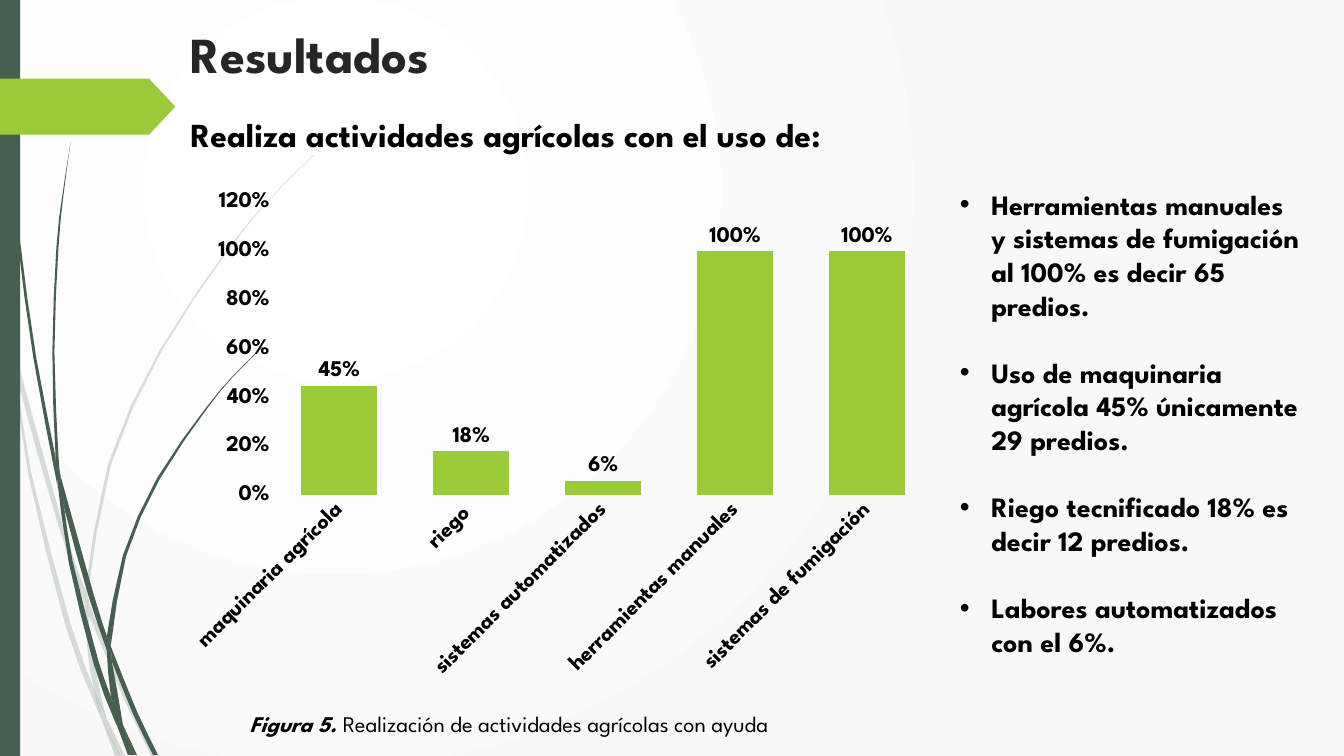
"""Build the results slide: farming activities chart with findings."""
from pptx import Presentation
from pptx import util as u
from pptx.chart.data import CategoryChartData
from pptx.dml.color import RGBColor
from pptx.enum import chart as ch, shapes
from pptx.oxml import parse_xml
from pptx.oxml.ns import nsdecls, qn
from pptx.oxml.xmlchemy import OxmlElement

Pt = u.Pt
FONT = "League Spartan"
COLORS = {"forest": "455F51", "lime": "99CB38", "title": "262626",
          "text": "000000", "center": "FFFFFF", "edge": "F8F8F8"}
PALE_BLADES = [
    ([(0, 215.3), (7.2, 247.7), (7.9, 252)], [(0, 203), (6.5, 231.8), (7.9, 252)]),
    ([(10.1, 248.4), (12.2, 270.7), (41.8, 375.8), (60.5, 431.3)],
     [(10.1, 248.4), (44.6, 374.4), (61.2, 421.9)]),
    ([(63.4, 439.2), (88.6, 499.7), (108, 540)],
     [(63.4, 429.1), (66.2, 437), (91.4, 498.2), (111.6, 540)]),
    ([(75.6, 511.9), (85.7, 540)], [(75.6, 511.9), (89.3, 540)]),
    ([(7.9, 252), (20.2, 338.4), (46.8, 447.1), (66.2, 499), (72.7, 514.1)],
     [(7.9, 252), (12.2, 270.7), (22.3, 337.7), (50.4, 445.7), (67, 491.8), (72.7, 514.1)]),
    ([(60.5, 431.3), (62.6, 465.1), (67, 491.8), (75.6, 511.9)],
     [(63.4, 439.2), (65.5, 465.1), (75.6, 511.9)]),
    ([(224.6, 110.2), (208.1, 126), (193, 141.8), (164.2, 175.7), (113.8, 250.6),
      (77, 331.9), (61.2, 420.5)],
     [(224.6, 110.9), (208.8, 126), (193, 142.6), (164.9, 176.4), (115.2, 251.3),
      (79.2, 332.6), (63.4, 420.5), (63.4, 429.1)]),
    ([(72.7, 514.1), (82.1, 540)], [(72.7, 514.1), (85.7, 540)]),
    ([(61.2, 421.9), (60.5, 431.3)], [(63.4, 429.1), (63.4, 439.2)]),
    ([(67, 491.8), (72.7, 514.1), (85.7, 540)], [(67, 491.8), (75.6, 511.9), (85.7, 540)]),
]
DARK_BLADES = [
    ([(2.2, 0), (5, 79.2), (12.2, 167.8), (23.8, 255.6), (40.3, 343.4), (41, 346.3)],
     [(2.9, 0), (5.8, 78.5), (13.7, 167), (25.9, 255.6), (39.6, 326.2), (41, 346.3)]),
    ([(43.2, 339.8), (46.1, 363.6), (63.4, 426.2), (76.3, 464.4)],
     [(43.2, 339.8), (67, 424.8), (76.3, 454.3)]),
    ([(79.9, 472.3), (95, 509.8), (109.4, 539.3)],
     [(79.2, 461.5), (81.4, 467.3), (97.9, 508.3), (113, 539.3)]),
    ([(41, 343.4), (49, 401), (67, 474.5), (79.9, 509.8), (84.2, 519.8)],
     [(41, 343.4), (46.1, 363.6), (51.8, 400.3), (70.6, 473), (79.2, 497.5), (84.2, 519.8)]),
    ([(50.4, 101.5), (44.6, 139), (40.3, 176.4), (37.4, 251.3), (39.6, 323.3), (43.2, 339.8)],
     [(50.4, 101.5), (45.4, 139), (41.8, 176.4), (38.9, 251.3), (41.8, 326.2), (43.2, 339.8)]),
    ([(87.8, 517.7), (95.8, 539.3)], [(87.8, 517.7), (97.9, 539.3)]),
    ([(39.6, 323.3), (41, 343.4), (46.1, 363.6)], [(39.6, 323.3), (43.2, 339.8), (46.1, 363.6)]),
    ([(187.2, 247.7), (166.3, 268.6), (146.9, 291.6), (112.3, 341.3), (87.8, 396.7),
      (76.3, 454.3)],
     [(187.9, 247.7), (166.3, 269.3), (147.6, 292.3), (113.8, 342.7), (90, 397.4),
      (79.9, 455.8), (79.2, 461.5)]),
    ([(84.2, 519.8), (91.4, 539.3)], [(84.2, 519.8), (94.3, 539.3)]),
    ([(76.3, 464.4), (79.2, 497.5), (87.8, 517.7)], [(76.3, 464.4), (79.9, 472.3), (87.8, 517.7)]),
    ([(76.3, 454.3), (76.3, 464.4)], [(79.2, 461.5), (79.9, 472.3)]),
    ([(79.2, 497.5), (84.2, 519.8), (93.6, 539.3)], [(79.2, 497.5), (87.8, 517.7), (95.8, 539.3)]),
]
FINDINGS = [
    "Herramientas manuales y sistemas de fumigación al 100% es decir 65 predios.",
    "Uso de maquinaria agrícola 45% únicamente 29 predios.",
    "Riego tecnificado 18% es decir 12 predios.",
    "Labores automatizados con el 6%.",
]
TEXTS = [
    (129, 13, 702, 101, 36, "title", ["Resultados"]),
    (129, 78, 538.5, 36, 24, "text", ["Realiza actividades agrícolas con el uso de:"]),
    (678.5, 130.2, 260.5, 419, 20, "text", FINDINGS),
    (171.2, 504, 465, 26.5, 16, "text",
     ["Figura 5. Realización de actividades agrícolas con ayuda"]),
]


def smooth(points):
    """Return points on a Catmull-Rom curve, halving each span."""
    ends = [points[0], *points, points[-1]]
    curve = [points[0]]
    for a, b, c, d in zip(ends, ends[1:], ends[2:], ends[3:]):
        curve += [tuple((9 * (q + r) - p - t) / 16 for p, q, r, t in zip(a, b, c, d)), c]
    return curve


def style(font, size, color):
    """Apply the slide's bold typeface with a size and colour."""
    font.name, font.size, font.bold = FONT, Pt(size), True
    font.color.rgb = RGBColor.from_string(COLORS[color])


prs = Presentation()
prs.slide_width, prs.slide_height = Pt(960), Pt(540)
s = prs.slides.add_slide(prs.slide_layouts[6])

fill = s.background.fill
fill.gradient()
for stop, position, name in zip(fill.gradient_stops, (0, 1), ("center", "edge")):
    stop.position = position
    stop.color.rgb = RGBColor.from_string(COLORS[name])
grad = s.element.find(".//" + qn("a:gradFill"))
grad.remove(grad.find(qn("a:lin")))
grad.append(parse_xml(
    f'<a:path {nsdecls("a")} path="circle">'
    '<a:fillToRect l="50000" t="50000" r="100000" b="100000"/></a:path>'))

painted = []
for blades, alpha in ((PALE_BLADES, 20000), (DARK_BLADES, 100000)):
    for left, right in blades:
        outline = [(Pt(x), Pt(y)) for x, y in smooth(left) + smooth(right)[::-1]]
        builder = s.shapes.build_freeform(*outline[0], scale=1.0)
        builder.add_line_segments(outline[1:], close=True)
        painted.append((builder.convert_to_shape(), "forest", alpha))
side_bar = s.shapes.add_shape(shapes.MSO_SHAPE.RECTANGLE, 0, 0, Pt(14.4), Pt(540))
arrow = s.shapes.add_shape(shapes.MSO_SHAPE.PENTAGON, 0, Pt(56.2), Pt(125.3), Pt(40))
arrow.adjustments[0] = 0.47
painted += [(side_bar, "forest", 100000), (arrow, "lime", 100000)]

for sp, color, alpha in painted:
    sp.shadow.inherit = False
    sp.fill.solid()
    sp.fill.fore_color.rgb = RGBColor.from_string(COLORS[color])
    sp.line.fill.background()
    if alpha < 100000:
        opacity = OxmlElement("a:alpha")
        opacity.set("val", str(alpha))
        sp.element.spPr.find(".//" + qn("a:srgbClr")).append(opacity)

for x, y, w, h, size, color, lines in TEXTS:
    sp = s.shapes.add_textbox(Pt(x), Pt(y), Pt(w), Pt(h))
    tf = sp.text_frame
    tf.word_wrap = True
    tf.text = "\n".join(lines)
    for i, p in enumerate(tf.paragraphs):
        style(p.runs[0].font, size, color)
        if lines is FINDINGS:
            p.space_before = Pt(24 if i else 0)
            pPr = p._p.get_or_add_pPr()
            pPr.set("marL", str(Pt(22.5)))
            pPr.set("indent", str(-Pt(22.5)))
            pPr.append(parse_xml(f'<a:buFont {nsdecls("a")} typeface="Arial"/>'))
            pPr.append(parse_xml(f'<a:buChar {nsdecls("a")} char="•"/>'))

p = tf.paragraphs[0]
label, rest = "Figura 5. ", p.runs[0].text.removeprefix("Figura 5. ")
p.runs[0].text = label
p.runs[0].font.italic = True
r = p.add_run()
r.text = rest
style(r.font, 16, "text")
r.font.bold = False

data = CategoryChartData(number_format="0%")
data.categories = ["maquinaria agrícola", "riego ", "sistemas automatizados",
                   "herramientas manuales", "sistemas de fumigación"]
data.add_series("Series 1", [0.45, 0.18, 0.06, 1, 1])
chart = s.shapes.add_chart(ch.XL_CHART_TYPE.COLUMN_CLUSTERED, Pt(127.8), Pt(130),
                           Pt(549.5), Pt(362), data).chart
chart.has_title = chart.has_legend = False
style(chart.font, 16, "text")
for axis in (chart.category_axis, chart.value_axis):
    axis.has_major_gridlines = False
    axis.major_tick_mark = axis.minor_tick_mark = ch.XL_TICK_MARK.NONE
    axis.format.line.fill.background()
    style(axis.tick_labels.font, 16, "text")
chart.category_axis._element.find(".//" + qn("a:bodyPr")).set("rot", "-2700000")
value_axis = chart.value_axis
value_axis.minimum_scale, value_axis.maximum_scale, value_axis.major_unit = 0, 1.2, 0.2
value_axis.tick_labels.number_format = "0%"
value_axis.tick_labels.number_format_is_linked = False

plot = chart.plots[0]
plot.gap_width, plot.vary_by_categories = 75, False
bars = plot.series[0]
bars.format.fill.solid()
bars.format.fill.fore_color.rgb = RGBColor.from_string(COLORS["lime"])
labels = bars.data_labels
labels.show_value = True
labels.number_format, labels.number_format_is_linked = "0%", False
labels.position = ch.XL_LABEL_POSITION.OUTSIDE_END
style(labels.font, 16, "text")

prs.save("out.pptx")
